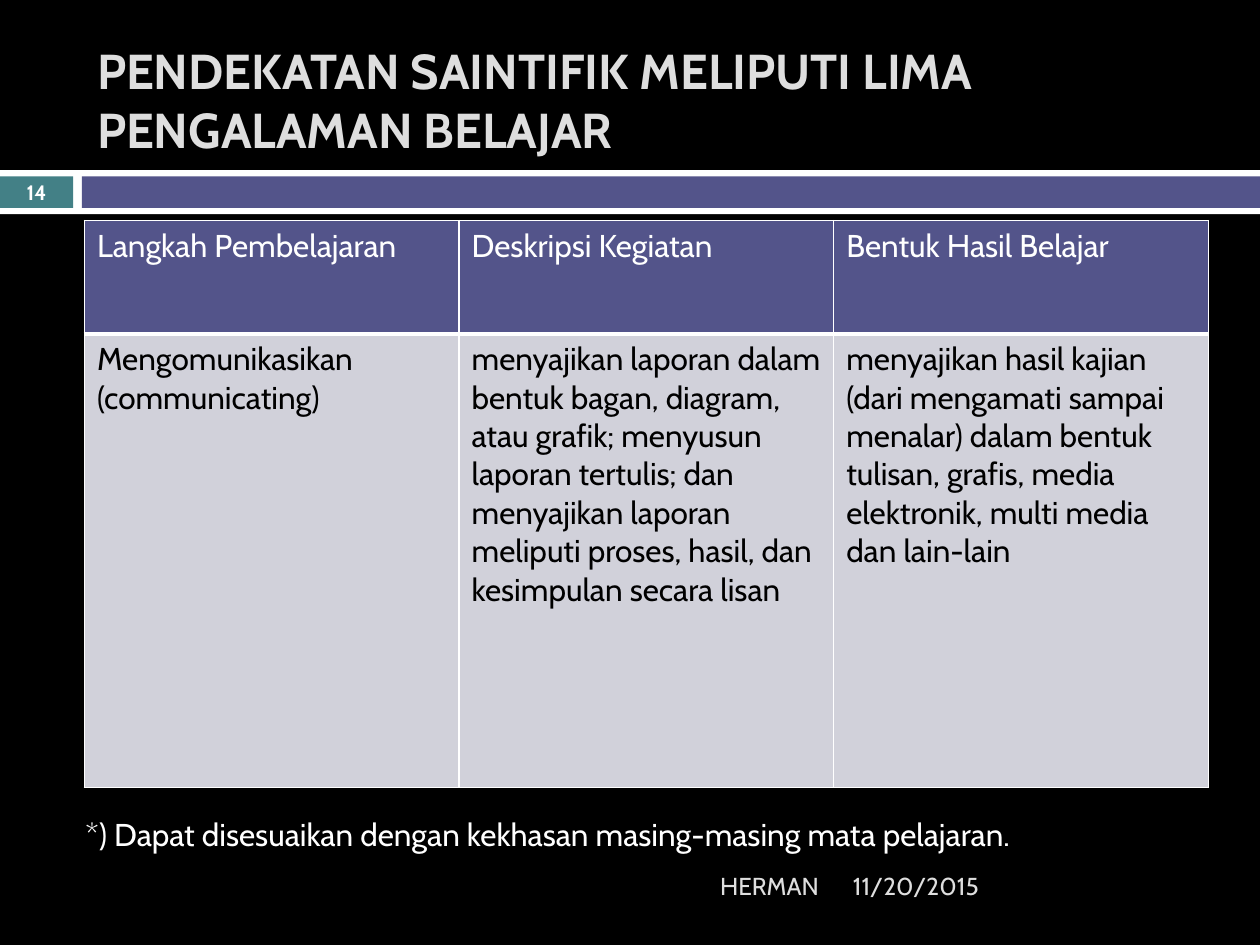
from lxml.etree import SubElement
from pptx import Presentation
from pptx.dml.color import RGBColor
from pptx.enum.shapes import MSO_SHAPE as Shape
from pptx.enum.text import MSO_ANCHOR as Anchor, MSO_AUTO_SIZE as AutoSize, PP_ALIGN as Align
from pptx.oxml.ns import qn
from pptx.util import Pt

PX = 9144
FONT = "Cabin"
BLACK = RGBColor(0x00, 0x00, 0x00)
WHITE = RGBColor(0xFF, 0xFF, 0xFF)
SILVER = RGBColor(0xDE, 0xDE, 0xDE)
TEAL = RGBColor(0x43, 0x80, 0x86)
INDIGO = RGBColor(0x53, 0x54, 0x8A)
LAVENDER = RGBColor(0xD1, 0xD1, 0xDA)

ROWS = [
    ["Langkah Pembelajaran", "Deskripsi Kegiatan", "Bentuk Hasil Belajar"],
    [
        "Mengomunikasikan (communicating)",
        "menyajikan laporan dalam bentuk bagan, diagram, atau grafik; menyusun "
        "laporan tertulis; dan menyajikan laporan meliputi proses, hasil, dan "
        "kesimpulan secara lisan",
        "menyajikan hasil kajian (dari mengamati sampai menalar) dalam bentuk "
        "tulisan, grafis, media elektronik, multi media dan lain-lain",
    ],
]


def emu(box):
    """Turn a box in px into EMU lengths."""
    return [length * PX for length in box]


def write(frame, text, size, color, bold=False, align=Align.LEFT):
    """Put one formatted paragraph into a text frame."""
    frame.text = text
    para = frame.paragraphs[0]
    para.alignment = align
    for span in para.runs:
        font = span.font
        font.name, font.size, font.bold = FONT, Pt(size), bold
        font.color.rgb = color


def add_label(page, box, text, size, color, anchor=Anchor.MIDDLE, **style):
    """Add a wrapping text box."""
    frame = page.shapes.add_textbox(*emu(box)).text_frame
    frame.word_wrap = True
    frame.vertical_anchor = anchor
    write(frame, text, size, color, **style)


def add_bar(page, box, color):
    """Add a plain filled rectangle."""
    bar = page.shapes.add_shape(Shape.RECTANGLE, *emu(box))
    bar.shadow.inherit = False
    bar.fill.solid()
    bar.fill.fore_color.rgb = color
    bar.line.fill.background()


def add_band(page, box, number):
    """Draw the white band with its number tab and long bar."""
    left, top, width, height = box
    tab, gap, inset = 58, 7, 5
    inner = top + inset, height - 2 * inset
    start = left + tab + gap
    add_bar(page, box, WHITE)
    add_bar(page, (left, inner[0], tab, inner[1]), TEAL)
    add_bar(page, (start, inner[0], left + width - start, inner[1]), INDIGO)
    add_label(page, (left, inner[0], tab, inner[1]), number, 11.9, WHITE,
              bold=True, align=Align.CENTER)


def add_title(page, box, text):
    """Move and fill the title placeholder."""
    title = page.shapes.title
    title.left, title.top, title.width, title.height = emu(box)
    frame = title.text_frame
    frame.word_wrap = True
    frame.auto_size = AutoSize.NONE
    frame.vertical_anchor = Anchor.MIDDLE
    write(frame, text, 28, SILVER, bold=True)


def set_borders(cell, widths):
    """Give a cell white borders, with widths in points by side."""
    props = cell._tc.get_or_add_tcPr()
    for index, (side, width) in enumerate(widths.items()):
        line = SubElement(props, qn(f"a:ln{side}"), w=str(Pt(width)))
        fill = SubElement(line, qn("a:solidFill"))
        SubElement(fill, qn("a:srgbClr"), val=str(WHITE))
        props.insert(index, line)


def add_steps_table(page, box, rows):
    """Add the table with one header row and equal columns."""
    left, top, width, height = emu(box)
    columns = len(rows[0])
    table = page.shapes.add_table(len(rows), columns, left, top, width, height).table
    for column in table.columns:
        column.width = width // columns
    table.rows[0].height = height // 5
    table.rows[1].height = height - height // 5
    looks = [(INDIGO, WHITE, 1, 3), (LAVENDER, BLACK, 3, 1)]
    for row, texts, (fill, ink, above, below) in zip(table.rows, rows, looks):
        for cell, text in zip(row.cells, texts):
            cell.fill.solid()
            cell.fill.fore_color.rgb = fill
            set_borders(cell, {"L": 1, "R": 1, "T": above, "B": below})
            write(cell.text_frame, text, 18, ink)


def add_footer(page, box, author, date):
    """Place the author to the left of the date."""
    left, top, width, height = box
    split, gap = 593, 7
    start = split + gap
    add_label(page, (left, top, split, height), author, 14, SILVER, align=Align.RIGHT)
    add_label(page, (left + start, top, width - start, height), date, 14, SILVER)


def main():
    """Build and save the slide."""
    deck = Presentation()
    deck.slide_width, deck.slide_height = 1000 * PX, 750 * PX
    page = deck.slides.add_slide(deck.slide_layouts[5])
    page.background.fill.solid()
    page.background.fill.fore_color.rgb = BLACK
    add_band(page, (0, 135, 1000, 35), "14")
    add_title(page, (67, 25, 892, 108),
              "PENDEKATAN SAINTIFIK MELIPUTI LIMA PENGALAMAN BELAJAR")
    add_steps_table(page, (67, 175, 892, 450), ROWS)
    add_label(page, (58, 642, 892, 40),
              "*) Dapat disesuaikan dengan kekhasan masing-masing mata pelajaran.",
              18, WHITE, anchor=Anchor.TOP)
    add_footer(page, (67, 683, 892, 40), "HERMAN", "11/20/2015")
    deck.save("out.pptx")


if __name__ == "__main__":
    main()
